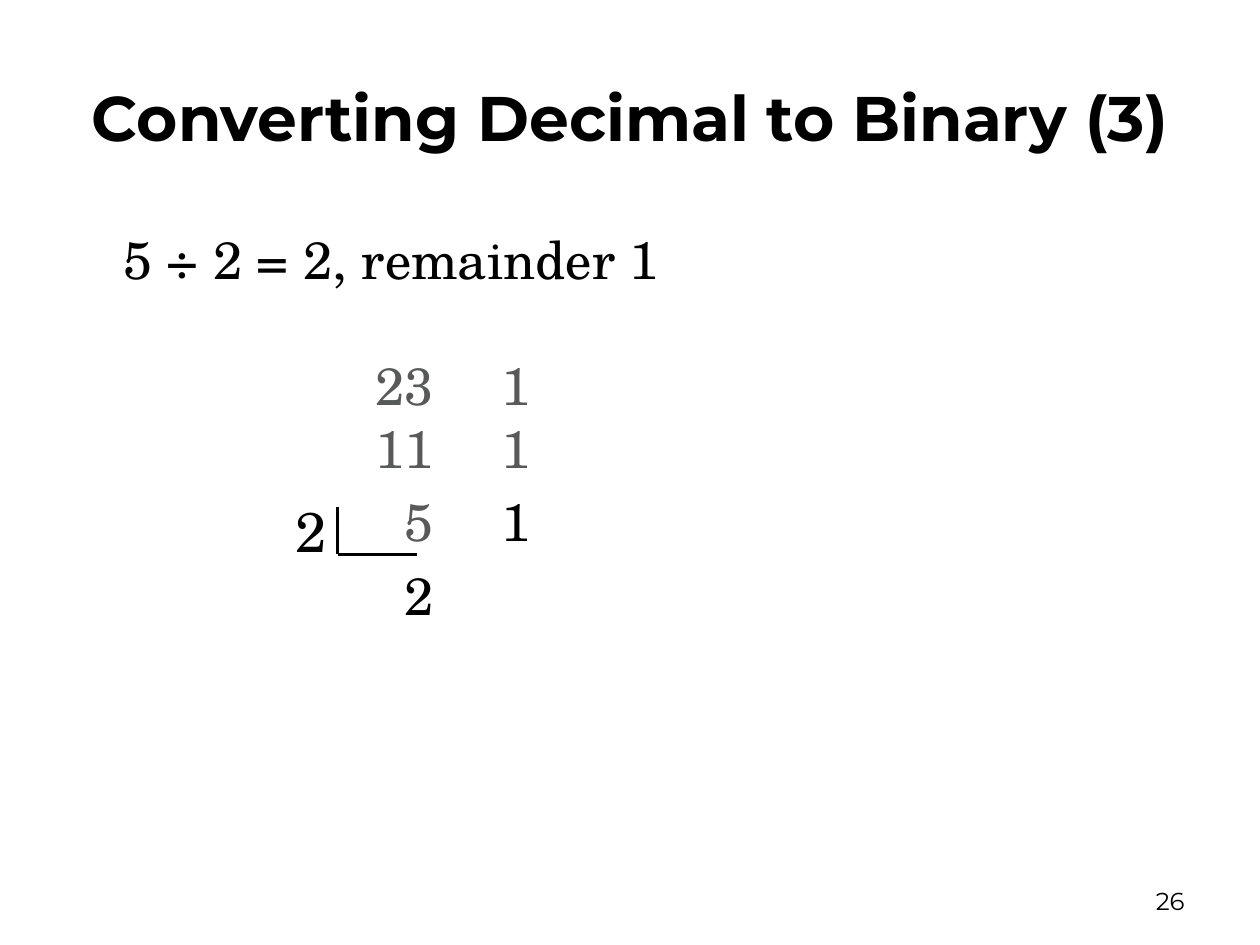
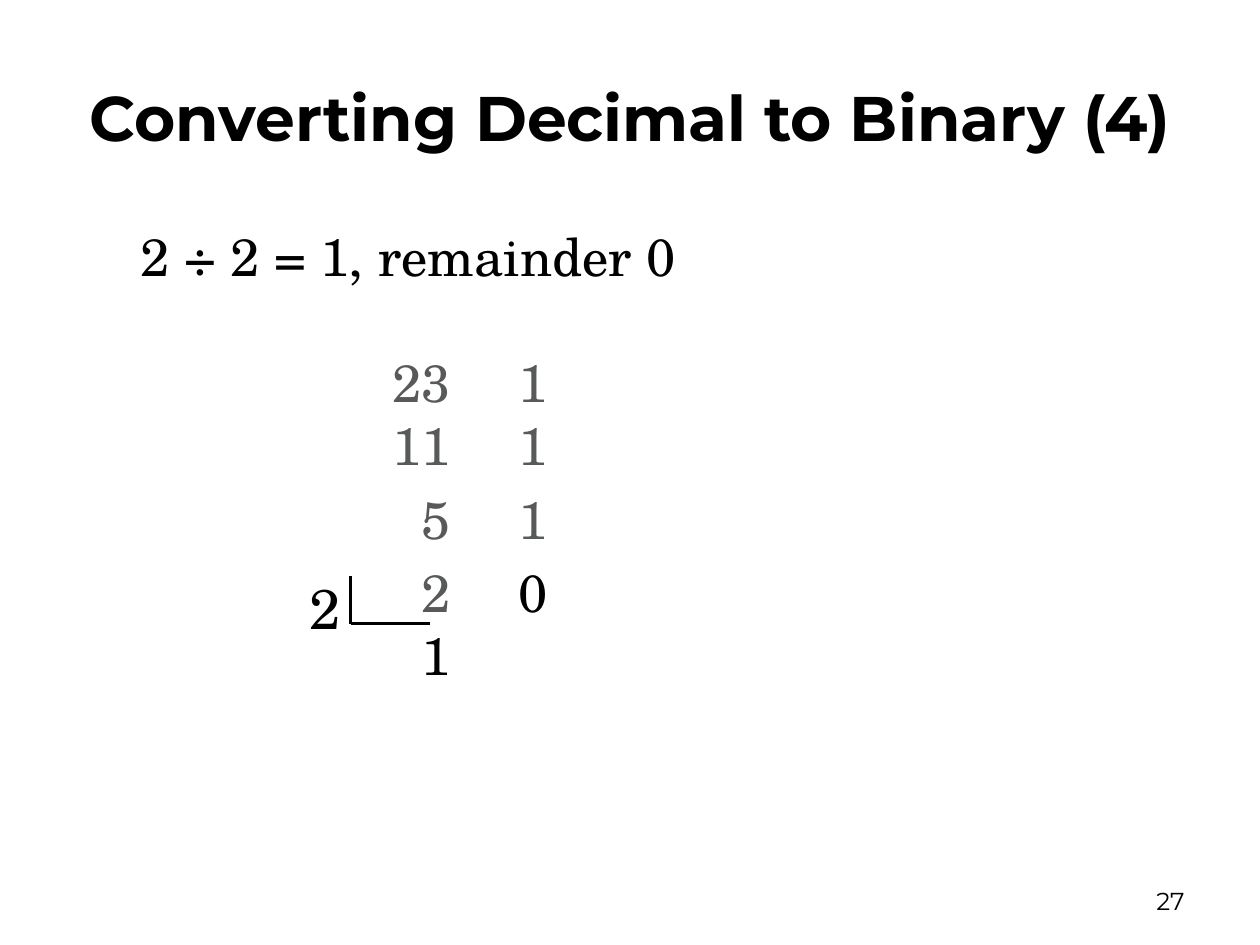
from lxml import etree
from pptx import Presentation
from pptx.dml.color import RGBColor
from pptx.enum.shapes import MSO_CONNECTOR as Connector
from pptx.enum.text import MSO_ANCHOR as Anchor, PP_ALIGN as Align
from pptx.oxml.ns import qn
from pptx.util import Pt

# Content: rows are (value, remainder, space before); corner is the bracket's elbow
STEPS = [
    {
        "title": "Converting Decimal to Binary (3)",
        "equation": "5 ÷ 2 = 2, remainder 1",
        "rows": [("23", "1", 36), ("11", "1", 0), ("5", "1", 6), ("2", "", 6)],
        "work_at": (63.2, 126),
        "divisor_at": (162, 280),
        "corner": (193, 316.8),
        "page": "26",
    },
    {
        "title": "Converting Decimal to Binary (4)",
        "equation": "2 ÷ 2 = 1, remainder 0",
        "rows": [("23", "1", 36), ("11", "1", 0), ("5", "1", 6),
                 ("2", "0", 6), ("1", "", 0)],
        "work_at": (73.2, 124.6),
        "divisor_at": (170, 324),
        "corner": (200.4, 356.4),
        "page": "27",
    },
]

# Shared style
BLACK, GRAY = "000000", "575A59"
SANS, SERIF = "Montserrat", "TeX Gyre Schola"
WORK_SIZE = 30
TAB_STOPS = [(177.4, "r"), (216, "l")]  # value column, remainder column
BRACKET_WIDTH, BRACKET_HEIGHT = 45.5, 27


def color(hex_code):
    return RGBColor.from_string(hex_code)


def style(paragraph, face, size, bold=False):
    font = paragraph.font
    font.name, font.size, font.bold = face, Pt(size), bold
    font.color.rgb = color(BLACK)


def add_text(slide, text, box, face, size, align=Align.LEFT,
             anchor=Anchor.TOP, bold=False):
    frame = slide.shapes.add_textbox(*map(Pt, box)).text_frame
    frame.word_wrap = True
    frame.vertical_anchor = anchor
    paragraph = frame.paragraphs[0]
    paragraph.text = text
    paragraph.alignment = align
    style(paragraph, face, size, bold)
    return frame


def add_tab_stops(paragraph):
    tabs = etree.SubElement(paragraph._p.get_or_add_pPr(), qn("a:tabLst"))
    for position, align in TAB_STOPS:
        etree.SubElement(tabs, qn("a:tab"), pos=str(Pt(position)), algn=align)


def add_work(slide, step):
    """The equation, then the ladder of quotients and remainders."""
    frame = add_text(slide, step["equation"], (*step["work_at"], 600, 360),
                     SERIF, WORK_SIZE)
    newest = len(step["rows"]) - 1
    for index, (value, remainder, gap) in enumerate(step["rows"]):
        row = frame.add_paragraph()
        add_tab_stops(row)
        row.space_before = Pt(gap)
        style(row, SERIF, WORK_SIZE)
        # The newest quotient and newest remainder stay black
        cells = [(value, index == newest), (remainder, index == newest - 1)]
        for text, is_new in cells:
            if text:
                run = row.add_run()
                run.text = "\t" + text
                run.font.color.rgb = color(BLACK if is_new else GRAY)


def add_line(slide, start, end):
    line = slide.shapes.add_connector(Connector.STRAIGHT,
                                      *map(Pt, (*start, *end)))
    line.line.color.rgb = color(BLACK)
    line.line.width = Pt(1.5)
    etree.SubElement(line._element.spPr, qn("a:effectLst"))


def add_division(slide, step):
    """The divisor and the bracket beside the current value."""
    add_text(slide, "2", (*step["divisor_at"], 45, 46), SERIF, 32)
    x, y = step["corner"]
    add_line(slide, (x, y - BRACKET_HEIGHT), (x, y))
    add_line(slide, (x + BRACKET_WIDTH, y), (x, y))


def main():
    deck = Presentation()
    deck.slide_width, deck.slide_height = Pt(720), Pt(540)
    for step in STEPS:
        slide = deck.slides.add_slide(deck.slide_layouts[6])
        add_text(slide, step["title"], (36, 21.6, 648, 90), SANS, 36,
                 Align.CENTER, Anchor.MIDDLE, bold=True)
        add_work(slide, step)
        add_text(slide, step["page"], (516, 500.4, 168, 28.8), SANS, 14,
                 Align.RIGHT, Anchor.MIDDLE)
        add_division(slide, step)
    deck.save("out.pptx")


if __name__ == "__main__":
    main()
